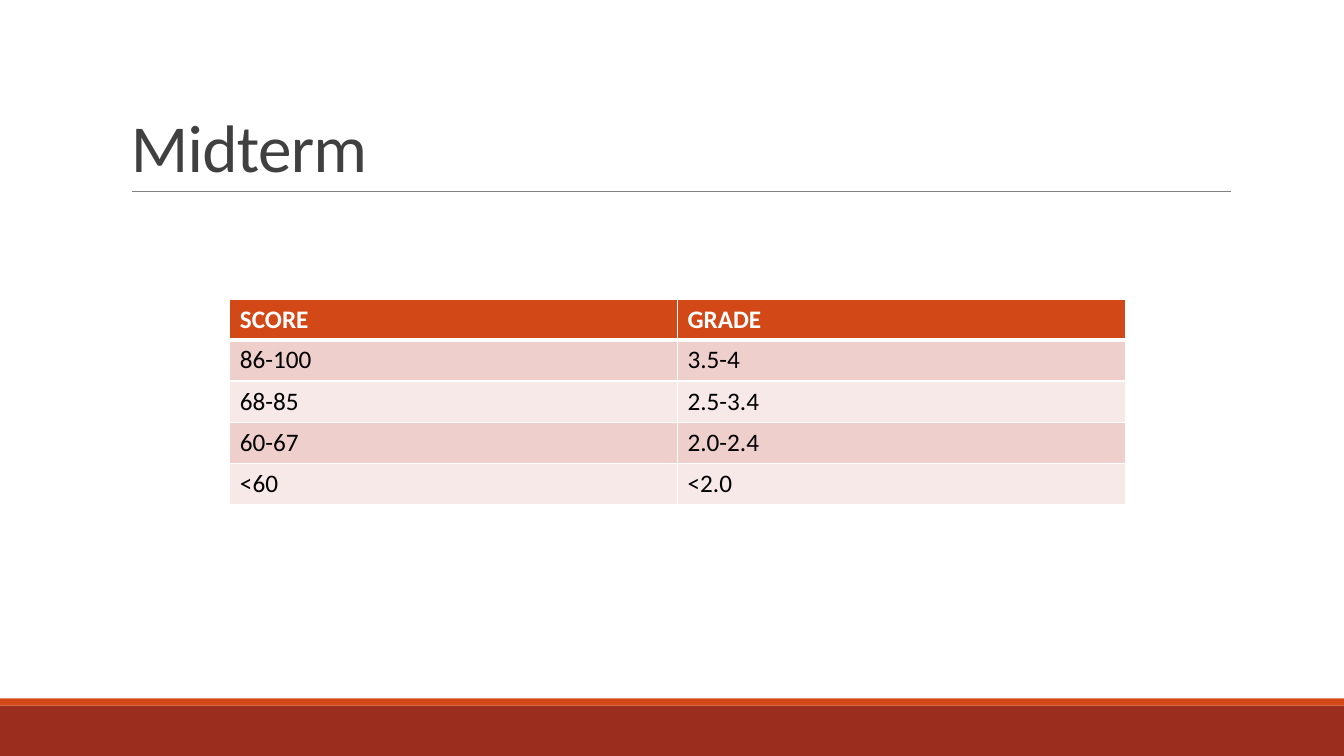
"""Build the midterm score and grade slide."""
from lxml.etree import SubElement
from pptx import Presentation
from pptx.dml.color import RGBColor
from pptx.enum.shapes import MSO_CONNECTOR as Line, MSO_SHAPE as Shape
from pptx.enum.text import MSO_ANCHOR as Anchor
from pptx.oxml import parse_xml
from pptx.oxml.ns import nsdecls, qn
from pptx.util import Inches, Pt

TITLE = "Midterm"
GRADES = [
    ("SCORE", "GRADE"),
    ("86-100", "3.5-4"),
    ("68-85", "2.5-3.4"),
    ("60-67", "2.0-2.4"),
    ("<60", "<2.0"),
]
BANDS = [(7, 0.5, "9B2D1F"), (6.93, 0.07, "D34817")]
HEAD, ODD, EVEN = "D34817", "EFCFCC", "F7E9E8"
WIDE, HIGH = 13.33, 7.5
COL, TOP_ROW, ROW = 4.44, 0.38, 0.41


def paint(fill, tone):
    fill.solid()
    fill.fore_color.rgb = RGBColor.from_string(tone)


def write(frame, text, size=18, tone="000000", bold=False, space=None, track=None):
    par = frame.paragraphs[0]
    par.line_spacing = space
    run = par.add_run()
    run.text = text
    font = run.font
    font.name, font.size, font.bold = "Calibri", Pt(size), bold
    paint(font.fill, tone)
    if track is not None:
        run._r.get_or_add_rPr().set("spc", str(int(track * 100)))


def edge(cell, head):
    props = cell._tc.get_or_add_tcPr()
    for spot, side in enumerate("LRTB"):
        thick = Pt(3 if head and side == "B" else 1)
        props.insert(spot, parse_xml(
            f'<a:ln{side} {nsdecls("a")} w="{thick}"><a:solidFill>'
            f'<a:srgbClr val="FFFFFF"/></a:solidFill></a:ln{side}>'))


def main():
    deck = Presentation()
    deck.slide_width, deck.slide_height = Inches(WIDE), Inches(HIGH)
    shapes = deck.slides.add_slide(deck.slide_layouts[6]).shapes

    for top, tall, tone in BANDS:
        band = shapes.add_shape(Shape.RECTANGLE, 0, Inches(top), Inches(WIDE), Inches(tall))
        band.shadow.inherit = False
        paint(band.fill, tone)
        band.line.fill.background()

    rule = shapes.add_connector(Line.STRAIGHT, Inches(1.31), Inches(1.9), Inches(12.21), Inches(1.9))
    paint(rule.line.fill, "808080")
    rule.line.width = Pt(0.5)
    SubElement(rule._element.spPr, qn("a:effectLst"))

    frame = shapes.add_textbox(Inches(1.2), Inches(0.31), Inches(11), Inches(1.59)).text_frame
    frame.word_wrap = True
    frame.vertical_anchor = Anchor.BOTTOM
    write(frame, TITLE, size=48, tone="404040", space=0.85, track=-0.5)

    count, cols = len(GRADES), len(GRADES[0])
    table = shapes.add_table(
        count, cols, Inches(2.28), Inches(2.97), Inches(COL * cols),
        Inches(TOP_ROW + ROW * (count - 1))).table
    for col in table.columns:
        col.width = Inches(COL)
    for i, texts in enumerate(GRADES):
        head = i == 0
        table.rows[i].height = Inches(TOP_ROW if head else ROW)
        for j, text in enumerate(texts):
            cell = table.cell(i, j)
            paint(cell.fill, HEAD if head else ODD if i % 2 else EVEN)
            edge(cell, head)
            write(cell.text_frame, text, tone="FFFFFF" if head else "000000", bold=head)

    deck.save("out.pptx")


if __name__ == "__main__":
    main()
